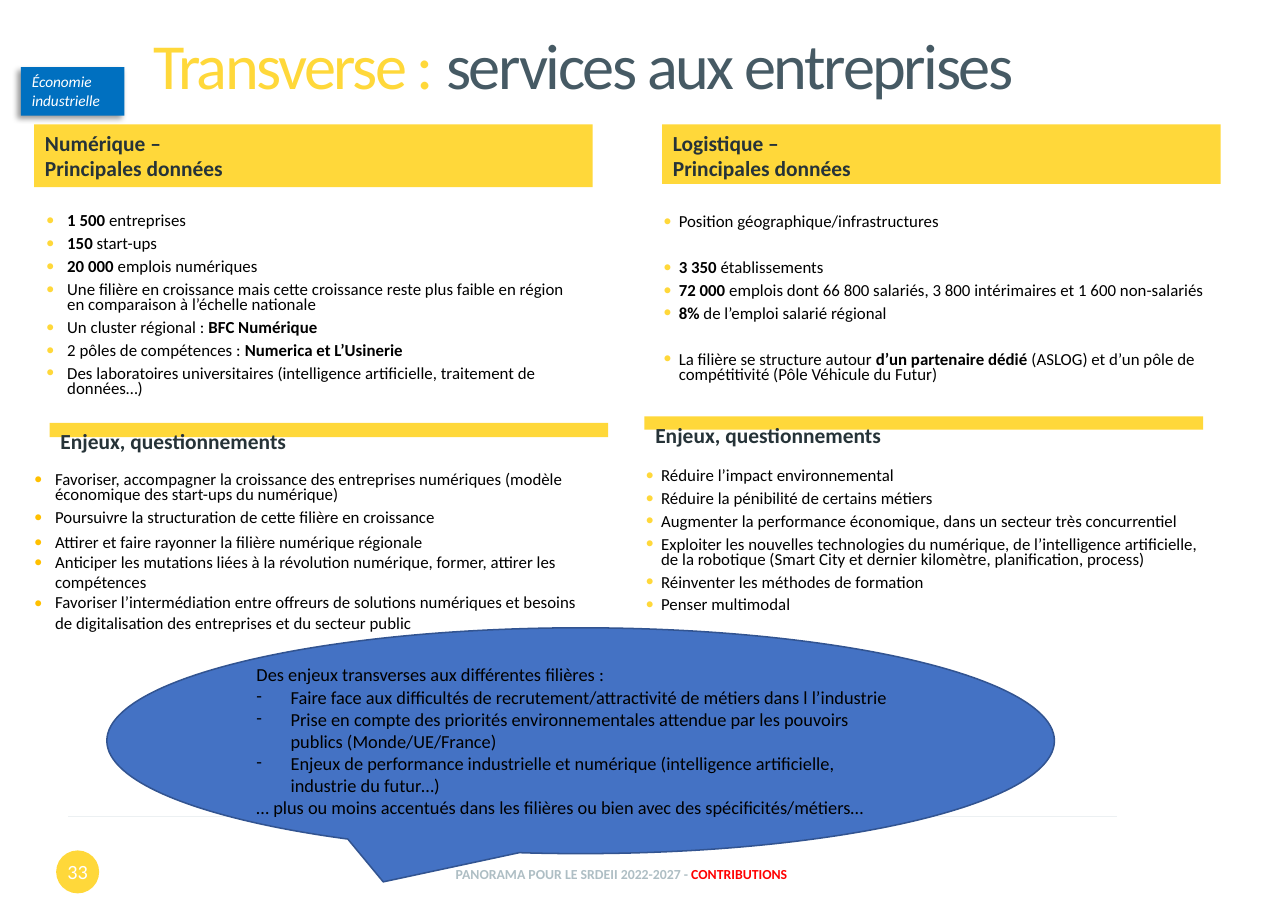
import collections

import lxml.etree
import pptx
import pptx.dml.color
import pptx.enum.shapes
import pptx.enum.text
import pptx.oxml
import pptx.oxml.ns
import pptx.util

WIDTH, HEIGHT = 11.69, 8.27
YELLOW, AMBER, BLACK, WHITE = "FFD83A", "FFC000", "000000", "FFFFFF"
SHAPES = pptx.enum.shapes.MSO_SHAPE
ALIGN = pptx.enum.text.PP_ALIGN
ANCHOR = pptx.enum.text.MSO_ANCHOR
Box = collections.namedtuple("Box", "left top width height")


def inside(box, left, top, width, height):
    return Box(box.left + left, box.top + top, width, height)


def lengths(box):
    column, row = WIDTH / 100, HEIGHT / 100
    return [pptx.util.Inches(share * unit)
            for share, unit in zip(box, (column, row, column, row))]


def color(hex_string):
    return pptx.dml.color.RGBColor.from_string(hex_string)


def child(parent, tag, **attributes):
    element = lxml.etree.SubElement(parent, pptx.oxml.ns.qn(tag))
    for key, setting in attributes.items():
        element.set(key, str(setting))
    return element


def write(frame, lines, size=11, ink=BLACK, bold=False, italic=False, accent=None,
          align=ALIGN.LEFT, anchor=ANCHOR.TOP, margins=(0.1, 0.05), leading=1,
          before=0, after=0, gaps=None, plain_from=None, tracking=0,
          bullet=None, bullet_ink=None, indent=0, bulleted=None):
    frame.word_wrap = True
    frame.auto_size = pptx.enum.text.MSO_AUTO_SIZE.NONE
    frame.vertical_anchor = anchor
    frame.margin_left = frame.margin_right = pptx.util.Inches(margins[0])
    frame.margin_top = frame.margin_bottom = pptx.util.Inches(margins[1])
    for index, line in enumerate(lines):
        paragraph = frame.add_paragraph() if index else frame.paragraphs[0]
        properties = paragraph._p.get_or_add_pPr()
        marked = bullet and (bulleted is None or index in bulleted)
        hang = pptx.util.Inches(indent) if marked else 0
        properties.set("marL", str(hang))
        properties.set("indent", str(-hang))
        if marked:
            if bullet_ink:
                child(child(properties, "a:buClr"), "a:srgbClr", val=bullet_ink)
            child(properties, "a:buFont", typeface="Calibri")
            child(properties, "a:buChar", char=bullet)
        else:
            child(properties, "a:buNone")
        plain = plain_from is not None and index >= plain_from
        extra = (gaps or {}).get(index, 0)
        paragraph.alignment = align
        paragraph.line_spacing = 1.0 if plain else leading
        paragraph.space_before = pptx.util.Pt(0 if plain or not index else before + extra)
        paragraph.space_after = pptx.util.Pt(0 if plain else after)
        for part, text in enumerate(line.split("*")):
            if not text:
                continue
            style = {"ink": ink, "bold": bold, **(accent or {} if part % 2 else {})}
            run = paragraph.add_run()
            run.text = text
            run.font.name = "Calibri"
            run.font.size = pptx.util.Pt(size)
            run.font.bold = style["bold"]
            run.font.italic = italic
            run.font.color.rgb = color(style["ink"])
            if tracking:
                run._r.get_or_add_rPr().set("spc", str(round(tracking * 100)))


def add_filled(slide, preset, box, fill):
    shape = slide.shapes.add_shape(preset, *lengths(box))
    shape.shadow.inherit = False
    shape.fill.solid()
    shape.fill.fore_color.rgb = color(fill)
    shape.line.fill.background()
    return shape


def move(placeholder, box):
    placeholder.left, placeholder.top, placeholder.width, placeholder.height = lengths(box)


def add_footer(slide, box):
    rule = slide.shapes.add_connector(
        pptx.enum.shapes.MSO_CONNECTOR.STRAIGHT,
        *lengths(Box(box.left + 1.5, box.top, box.left + 82.94, box.top)))
    rule.line.color.rgb = color("ECF0F2")
    rule.line.width = pptx.util.Pt(0.5)
    child(rule._element.spPr, "a:effectLst")
    page = add_filled(slide, SHAPES.OVAL, inside(box, 0.56, 3.75, 3.34, 4.72), YELLOW)
    write(page.text_frame, ["33"], size=13.2, ink=WHITE, align=ALIGN.CENTER,
          anchor=ANCHOR.MIDDLE, margins=(0, 0))
    credit = slide.shapes.add_textbox(*lengths(inside(box, 5.78, 3.63, 77.33, 5.32)))
    write(credit.text_frame, ["PANORAMA POUR LE SRDEII 2022-2027 - *CONTRIBUTIONS"],
          size=9, ink="AEBEC4", bold=True, accent={"ink": "FF0000"},
          align=ALIGN.CENTER, anchor=ANCHOR.MIDDLE)


def add_header(slide, box):
    title = slide.shapes.title
    move(title, inside(box, 9.41, 0, 87.17, 10.16))
    write(title.text_frame, ["*Transverse : *services aux entreprises"], size=42,
          ink="465A64", accent={"ink": YELLOW}, anchor=ANCHOR.BOTTOM,
          leading=0.7, tracking=-1.6)
    theme = add_filled(slide, SHAPES.RECTANGLE, inside(box, 0, 5.93, 8.04, 5.32), "0070C0")
    effects = theme._element.spPr.find(pptx.oxml.ns.qn("a:effectLst"))
    shadow = child(effects, "a:outerShdw", blurRad=pptx.util.Pt(4),
                   dist=pptx.util.Pt(3), dir=135 * 60000, rotWithShape=0)
    child(child(shadow, "a:srgbClr", val=BLACK), "a:alpha", val=40000)
    write(theme.text_frame, ["Économie industrielle"], size=10, ink=WHITE, italic=True)


def add_panel(slide, box, heading, bar_height, body, points, list_left, list_top,
              list_width, **format):
    bar = add_filled(slide, SHAPES.RECTANGLE,
                     inside(box, 0, 0, box.width, bar_height), YELLOW)
    write(bar.text_frame, heading, size=14, ink="263338", bold=True)
    move(body, inside(box, list_left, list_top, list_width, box.height - list_top))
    write(body.text_frame, points, accent={"bold": True}, margins=(0, 0.05),
          leading=0.75, before=2, after=3, bullet="•",
          **{"bullet_ink": YELLOW, **format})


def add_callout(slide, box):
    callout = add_filled(slide, SHAPES.OVAL_CALLOUT, box, "4472C4")
    callout.line.color.rgb = color("325491")
    callout.line.width = pptx.util.Pt(1)
    write(callout.text_frame, [
        "Des enjeux transverses aux différentes filières :",
        "Faire face aux difficultés de recrutement/attractivité de métiers dans l l’industrie",
        "Prise en compte des priorités environnementales attendue par les pouvoirs publics (Monde/UE/France)",
        "Enjeux de performance industrielle et numérique (intelligence artificielle, industrie du futur…)",
        "… plus ou moins accentués dans les filières ou bien avec des spécificités/métiers…",
    ], size=12, anchor=ANCHOR.MIDDLE, bullet="-", indent=0.31, bulleted=(1, 2, 3))


def main():
    deck = pptx.Presentation()
    deck.slide_width = pptx.util.Inches(WIDTH)
    deck.slide_height = pptx.util.Inches(HEIGHT)
    slide = deck.slides.add_slide(deck.slide_layouts.get_by_name("Comparison"))
    digital_facts, digital_stakes, logistics_facts, logistics_stakes = [
        slide.placeholders[index] for index in (1, 2, 3, 4)]
    stakes = ["Enjeux, questionnements"]
    add_footer(slide, Box(3.8, 89.6, 83, 9))
    add_header(slide, Box(1.63, 1.45, 96.5, 12))
    add_panel(slide, Box(2.65, 13.66, 43.37, 30.35),
              ["Numérique –", "Principales données"], 6.89, digital_facts, [
        "*1 500 *entreprises",
        "*150 *start-ups",
        "*20 000 *emplois numériques",
        "Une filière en croissance mais cette croissance reste plus faible en région en comparaison à l’échelle nationale",
        "Un cluster régional : *BFC Numérique",
        "2 pôles de compétences : *Numerica et L’Usinerie",
        "Des laboratoires universitaires (intelligence artificielle, traitement de données…)",
    ], 0.94, 9.31, 40.8, indent=0.19)
    add_panel(slide, Box(51.41, 13.66, 43.37, 30.35),
              ["Logistique –", "Principales données"], 6.53, logistics_facts, [
        "Position géographique/infrastructures",
        "*3 350 *établissements",
        "*72 000 *emplois dont 66 800 salariés, 3 800 intérimaires et 1 600 non-salariés",
        "*8% *de l’emploi salarié régional",
        "La filière se structure autour *d’un partenaire dédié *(ASLOG) et d’un pôle de compétitivité (Pôle Véhicule du Futur)",
    ], 0.09, 9.4, 43.28, indent=0.14, gaps={1: 15, 4: 15})
    add_panel(slide, Box(3.85, 46.43, 43.37, 25.63), stakes, 1.57, digital_stakes, [
        "Favoriser, accompagner la croissance des entreprises numériques (modèle économique des start-ups du numérique)",
        "Poursuivre la structuration de cette filière en croissance",
        "Attirer et faire rayonner la filière numérique régionale",
        "Anticiper les mutations liées à la révolution numérique, former, attirer les compétences",
        "Favoriser l’intermédiation entre offreurs de solutions numériques et besoins de digitalisation des entreprises et du secteur public",
    ], -1.2, 4.96, 43.37, indent=0.19, bullet_ink=AMBER, plain_from=2)
    add_panel(slide, Box(50.04, 45.71, 43.37, 23.58), stakes, 1.45, logistics_stakes, [
        "Réduire l’impact environnemental",
        "Réduire la pénibilité de certains métiers",
        "Augmenter la performance économique, dans un secteur très concurrentiel",
        "Exploiter les nouvelles technologies du numérique, de l’intelligence artificielle, de la robotique (Smart City et dernier kilomètre, planification, process)",
        "Réinventer les méthodes de formation",
        "Penser multimodal",
    ], 0.09, 5.2, 43.28, indent=0.14)
    add_callout(slide, Box(8.3, 68.92, 73.57, 24.79))
    deck.save("out.pptx")


if __name__ == "__main__":
    main()
